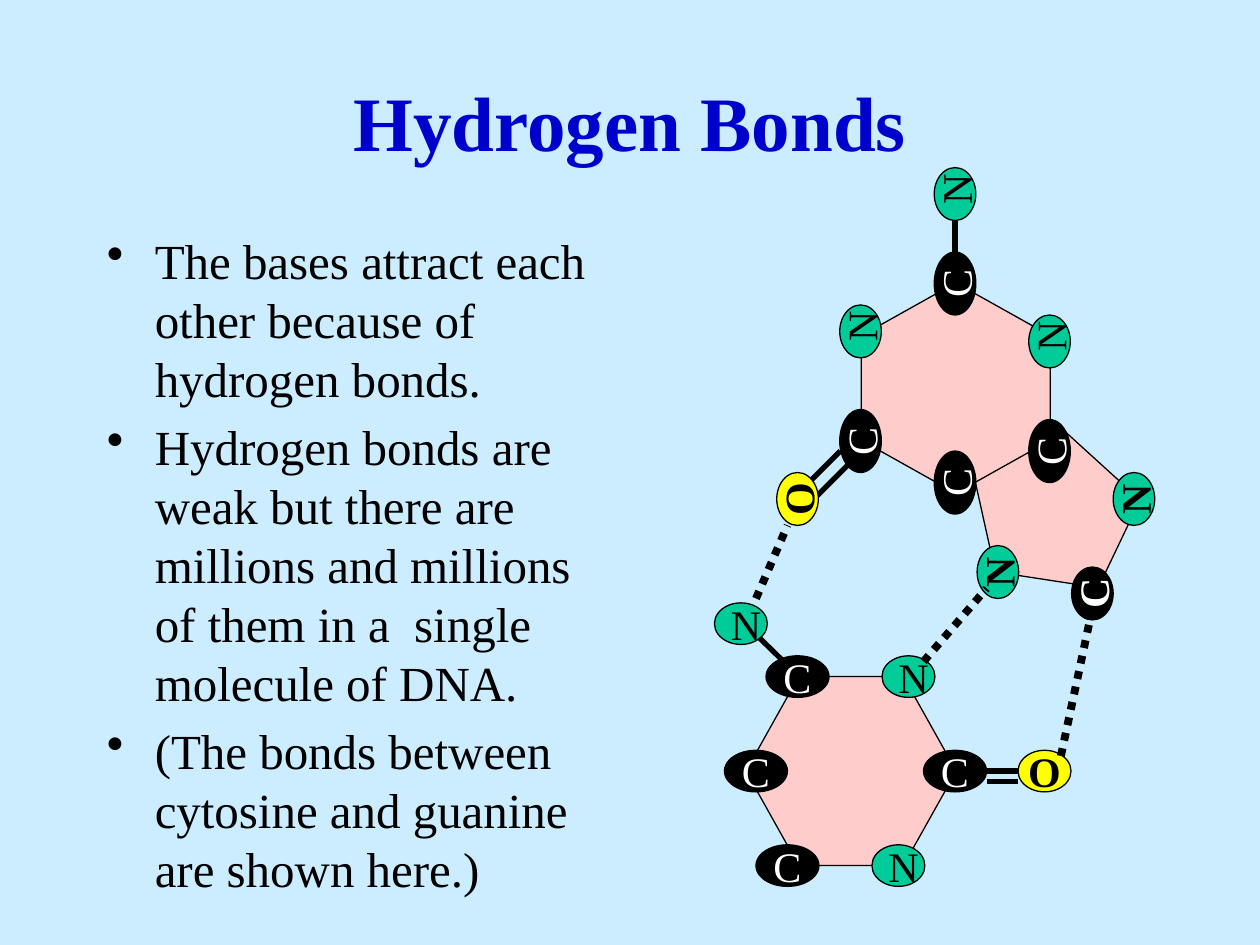
from lxml import etree
from pptx import Presentation
from pptx import util as u
from pptx.dml.color import RGBColor
from pptx.enum import dml, shapes, text
from pptx.oxml.ns import qn

SKY = RGBColor(0xCC, 0xEC, 0xFF)
BLUE = RGBColor(0x00, 0x00, 0xCC)
PINK = RGBColor(0xFF, 0xCC, 0xCC)
GREEN = RGBColor(0x00, 0xCC, 0x99)
YELLOW = RGBColor(0xFF, 0xFF, 0x00)
BLACK = RGBColor(0x00, 0x00, 0x00)
WHITE = RGBColor(0xFF, 0xFF, 0xFF)

KINDS = {
    "C": ("C", BLACK, WHITE, 0.5, False),
    "c": ("C", BLACK, WHITE, 0.42, True),
    "N": (" N", GREEN, BLACK, 0.42, False),
    "n": ("N", GREEN, BLACK, 0.42, True),
    "O": ("O", YELLOW, BLACK, 0.42, True),
}

LOWER = [
    ("C", 6.33, 5.37), ("C", 6, 6.12), ("C", 6.25, 6.87), ("C", 7.58, 6.12),
    ("N", 7.13, 6.87), ("N", 7.21, 5.37), ("N", 5.88, 4.95), ("O", 8.29, 6.12),
]
UPPER = [
    ("C", 6.83, 3.5), ("C", 7.58, 3.83), ("C", 8.33, 3.58), ("C", 7.58, 2.25),
    ("N", 8.33, 2.71), ("N", 6.83, 2.63), ("N", 7.58, 1.54), ("O", 6.33, 3.96),
    ("n", 9, 3.96), ("n", 7.92, 4.54), ("c", 8.67, 4.71),
]
BONDS = [
    (6.25, 5.28, 5.83, 4.87), (7.83, 6.12, 8.08, 6.12), (7.83, 6.2, 8.08, 6.2),
    (6.67, 3.58, 6.33, 3.92), (6.75, 3.67, 6.42, 4), (7.58, 2, 7.58, 1.75),
]
DOTS = [
    (6, 4.75, 6.25, 4.17), (7.33, 5.25, 7.83, 4.67), (8.42, 6, 8.67, 4.83),
]
POINTS = [
    "The bases attract each other because of hydrogen bonds.",
    "Hydrogen bonds are weak but there are millions and millions of them "
    "in a  single molecule of DNA.",
    "(The bonds between cytosine and guanine are shown here.)",
]


class Board:
    face = "Times New Roman"

    def __init__(self, slide):
        self.slide = slide
        fill = slide.background.fill
        fill.solid()
        fill.fore_color.rgb = SKY

    def style(self, para, size, color, bold=False):
        for run in para.runs:
            run.font.name = self.face
            run.font.size = u.Pt(size)
            run.font.color.rgb = color
            run.font.bold = bold

    def shape(self, kind, box, fill, turn=0):
        item = self.slide.shapes.add_shape(kind, *map(u.Inches, box))
        item.shadow.inherit = False
        item.fill.solid()
        item.fill.fore_color.rgb = fill
        item.line.color.rgb = BLACK
        item.line.width = u.Pt(0.75)
        item.rotation = turn
        return item

    def ring(self, left, top, turn):
        item = self.shape(shapes.MSO_SHAPE.HEXAGON, (left, top, 1.67, 1.5), PINK, turn)
        item.adjustments[0] = 0.28

    def atom(self, kind, x, y, turn):
        label, fill, ink, wide, bold = KINDS[kind]
        high = 0.33
        box = (x - wide / 2, y - high / 2, wide, high)
        frame = self.shape(shapes.MSO_SHAPE.OVAL, box, fill, turn).text_frame
        frame.text = label
        frame.word_wrap = False
        frame.vertical_anchor = text.MSO_ANCHOR.MIDDLE
        para = frame.paragraphs[0]
        para.alignment = text.PP_ALIGN.CENTER
        self.style(para, 24, ink, bold)

    def bond(self, ends, width, dash=None):
        line = self.slide.shapes.add_connector(
            shapes.MSO_CONNECTOR.STRAIGHT, *map(u.Inches, ends))
        line.line.color.rgb = BLACK
        line.line.width = u.Pt(width)
        if dash:
            line.line.dash_style = dash
        props = line._element.find(qn("p:spPr"))
        etree.SubElement(props, qn("a:effectLst"))

    def frame(self, box):
        frame = self.slide.shapes.add_textbox(*map(u.Inches, box)).text_frame
        frame.word_wrap = True
        return frame

    def title(self, words):
        frame = self.frame((0.75, 0.33, 8.5, 1.25))
        frame.text = words
        frame.vertical_anchor = text.MSO_ANCHOR.MIDDLE
        para = frame.paragraphs[0]
        para.alignment = text.PP_ALIGN.CENTER
        self.style(para, 44, BLUE, True)

    def list(self, points):
        frame = self.frame((0.75, 1.78, 4.08, 5.47))
        for rank, words in enumerate(points):
            para = frame.add_paragraph() if rank else frame.paragraphs[0]
            para.text = words
            props = para._p.get_or_add_pPr()
            props.set("marL", str(u.Inches(0.38)))
            props.set("indent", str(u.Inches(-0.38)))
            etree.SubElement(props, qn("a:buChar")).set("char", "•")
            if rank:
                para.space_before = u.Pt(5.6)
            self.style(para, 28, BLACK)


def main():
    deck = Presentation()
    deck.slide_width = u.Inches(10)
    deck.slide_height = u.Inches(7.5)
    board = Board(deck.slides.add_slide(deck.slide_layouts[6]))
    board.ring(5.92, 5.37, 0)
    board.shape(shapes.MSO_SHAPE.REGULAR_PENTAGON, (7.68, 3.4, 1.25, 1.28), PINK, 295.5)
    board.ring(6.75, 2.33, 90)
    for ends in BONDS:
        board.bond(ends, 3)
    for group, turn in ((LOWER, 0), (UPPER, 270)):
        for kind, x, y in group:
            board.atom(kind, x, y, turn)
    for ends in DOTS:
        board.bond(ends, 4.5, dml.MSO_LINE.ROUND_DOT)
    board.title("Hydrogen Bonds")
    board.list(POINTS)
    deck.save("out.pptx")


if __name__ == "__main__":
    main()
